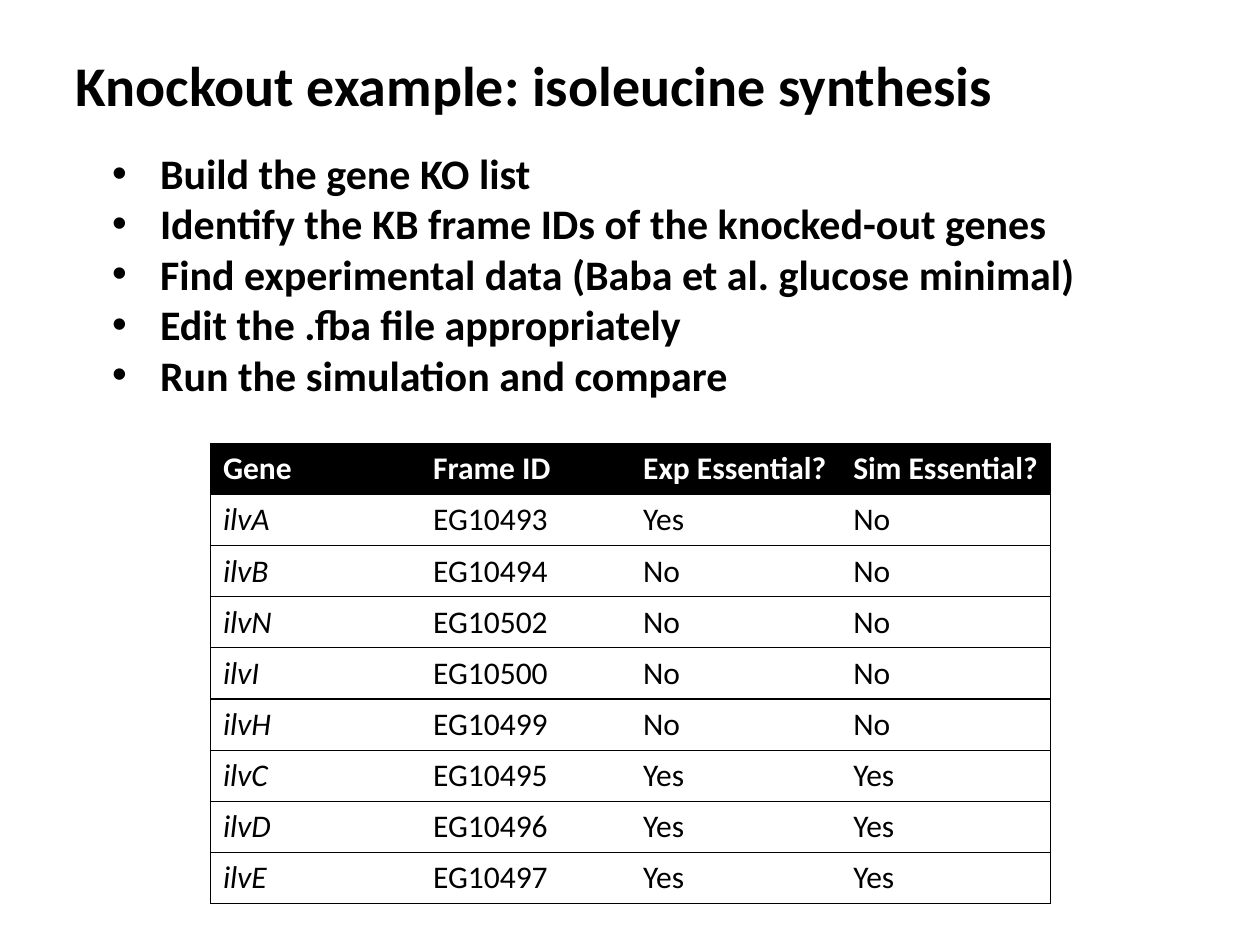
from lxml.etree import SubElement
from pptx import Presentation
from pptx.dml.color import RGBColor
from pptx.enum.text import MSO_ANCHOR, MSO_AUTO_SIZE, PP_ALIGN
from pptx.oxml.ns import qn
from pptx.util import Inches, Pt

BLACK = RGBColor(0x00, 0x00, 0x00)
WHITE = RGBColor(0xFF, 0xFF, 0xFF)
FONT = "Calibri"

STEPS = [
    "Build the gene KO list",
    "Identify the KB frame IDs of the knocked-out genes",
    "Find experimental data (Baba et al. glucose minimal)",
    "Edit the .fba file appropriately",
    "Run the simulation and compare",
]
HEADINGS = ("Gene", "Frame ID", "Exp Essential?", "Sim Essential?")
GENES = [
    ("ilvA", "EG10493", "Yes", "No"),
    ("ilvB", "EG10494", "No", "No"),
    ("ilvN", "EG10502", "No", "No"),
    ("ilvI", "EG10500", "No", "No"),
    ("ilvH", "EG10499", "No", "No"),
    ("ilvC", "EG10495", "Yes", "Yes"),
    ("ilvD", "EG10496", "Yes", "Yes"),
    ("ilvE", "EG10497", "Yes", "Yes"),
]


def place(placeholder, left, top, width, height):
    placeholder.left, placeholder.top = Inches(left), Inches(top)
    placeholder.width, placeholder.height = Inches(width), Inches(height)
    placeholder.text_frame.auto_size = MSO_AUTO_SIZE.NONE


def style_text(paragraph, size, color=BLACK, bold=False, italic=False):
    paragraph.alignment = PP_ALIGN.LEFT
    for run in paragraph.runs:
        font = run.font
        font.name, font.size, font.color.rgb = FONT, Pt(size), color
        font.bold, font.italic = bold, italic


def add_title(slide, text):
    title = slide.shapes.title
    place(title, 0.5, 0.3, 9, 0.73)
    title.text_frame.vertical_anchor = MSO_ANCHOR.MIDDLE
    title.text_frame.text = text
    style_text(title.text_frame.paragraphs[0], 32, bold=True)


def add_bullets(slide, steps):
    body = slide.placeholders[1]
    place(body, 0.79, 1.12, 8.37, 2.12)
    body.text_frame.text = "\n".join(steps)
    for paragraph in body.text_frame.paragraphs:
        paragraph.space_before = Pt(0)
        style_text(paragraph, 24, bold=True)
        properties = paragraph._p.get_or_add_pPr()
        properties.set("marL", str(Inches(0.38)))
        properties.set("indent", str(-Inches(0.38)))
        SubElement(properties, qn("a:buFont"), typeface="Arial")
        SubElement(properties, qn("a:buChar"), char="•")


def add_border(cell, side, visible):
    properties = cell._tc.get_or_add_tcPr()
    line = SubElement(properties, qn(f"a:ln{side}"), w=str(Pt(0.75)))
    if visible:
        fill = SubElement(line, qn("a:solidFill"))
        SubElement(fill, qn("a:srgbClr"), val=str(BLACK))
    else:
        SubElement(line, qn("a:noFill"))


def fill_cell(cell, text, row, column):
    header = row == 0
    cell.text = text
    style_text(cell.text_frame.paragraphs[0], 18, WHITE if header else BLACK,
               bold=header, italic=column == 0 and not header)
    # Rules run between rows and around the outside, not between columns
    visible = {"L": column == 0, "R": column == len(HEADINGS) - 1,
               "T": True, "B": True}
    for side, shown in visible.items():
        add_border(cell, side, shown)
    cell.fill.solid()
    cell.fill.fore_color.rgb = BLACK if header else WHITE


def add_gene_table(slide, rows):
    table = slide.shapes.add_table(
        len(rows), len(HEADINGS),
        Inches(1.67), Inches(3.52), Inches(6.67), Inches(3.65)).table
    table.horz_banding = False
    for r, values in enumerate(rows):
        for c, value in enumerate(values):
            fill_cell(table.cell(r, c), value, r, c)


def main():
    presentation = Presentation()
    presentation.slide_width, presentation.slide_height = Inches(10), Inches(7.5)
    slide = presentation.slides.add_slide(presentation.slide_layouts[1])

    # Heading and steps
    add_title(slide, "Knockout example: isoleucine synthesis")
    add_bullets(slide, STEPS)

    # Experimental and simulated essentiality per gene
    add_gene_table(slide, [HEADINGS, *GENES])

    presentation.save("out.pptx")


if __name__ == "__main__":
    main()
